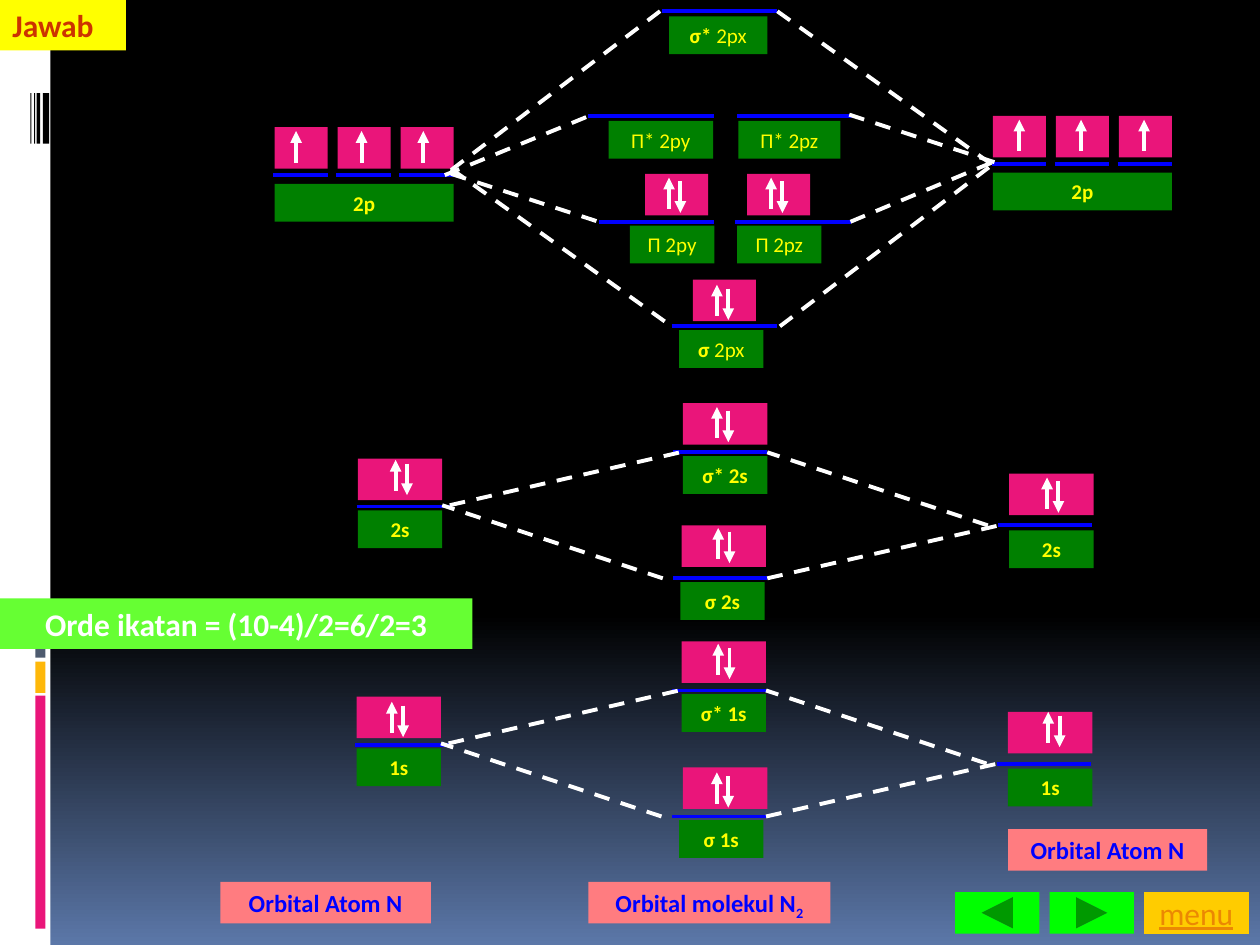
from dataclasses import dataclass

from lxml import etree
from pptx import Presentation
from pptx.dml.color import RGBColor
from pptx.enum.dml import MSO_LINE
from pptx.enum.shapes import MSO_CONNECTOR, MSO_SHAPE
from pptx.enum.text import MSO_ANCHOR, PP_ALIGN
from pptx.oxml.ns import qn
from pptx.util import Inches, Pt

RECTANGLE = MSO_SHAPE.RECTANGLE
BACK = MSO_SHAPE.ACTION_BUTTON_BACK_OR_PREVIOUS
FORWARD = MSO_SHAPE.ACTION_BUTTON_FORWARD_OR_NEXT
BLANK_BUTTON = MSO_SHAPE.ACTION_BUTTON_CUSTOM
STRAIGHT = MSO_CONNECTOR.STRAIGHT
DASH = MSO_LINE.DASH
LEFT, CENTER = PP_ALIGN.LEFT, PP_ALIGN.CENTER
TOP, MIDDLE = MSO_ANCHOR.TOP, MSO_ANCHOR.MIDDLE


@dataclass(frozen=True)
class Theme:
    font: str = "Calibri"
    black: str = "000000"
    white: str = "FFFFFF"
    horizon: str = "5B77A8"
    pink: str = "EA157A"
    amber: str = "FEB80A"
    slate: str = "4E5B6F"
    level: str = "0000FF"
    label: str = "008000"
    yellow: str = "FFFF00"
    caption: str = "FF7C80"
    result: str = "66FF33"
    title: str = "CC3300"
    button: str = "00FF00"
    menu: str = "FFCC00"
    menu_text: str = "EB8803"
    label_size: int = 12
    caption_size: int = 14
    heading_size: int = 18
    line_width: float = 2.25


THEME = Theme()

# Left, top, width, height, colour
SIDEBAR = [
    (0, 0, 0.4, 7.5, THEME.white),
    (0.28, 5.52, 0.08, 1.85, THEME.pink),
    (0.28, 5.25, 0.08, 0.25, THEME.amber),
    (0.28, 5.07, 0.08, 0.15, THEME.slate),
    (0.34, 0.74, 0.05, 0.4, THEME.black),
    (0.29, 0.74, 0.03, 0.4, THEME.black),
    (0.27, 0.74, 0.01, 0.4, THEME.black),
    (0.24, 0.74, 0.01, 0.4, THEME.black),
]

# The s shells share one layout: name, shift right, shift down
S_SHELLS = [("1s", 0, 0), ("2s", 0.01, -1.89)]
# Label prefix, level left and top, label left and top
S_ORBITALS = [
    ("", 2.82, 5.91, 2.83, 5.94),
    ("", 7.91, 6.06, 8, 6.1),
    ("σ* ", 5.33, 5.48, 5.41, 5.51),
    ("σ ", 5.33, 6.48, 5.39, 6.51),
]
S_LINKS = [
    (3.56, 5.9, 5.39, 5.48),
    (6.08, 6.48, 7.92, 6.06),
    (5.25, 6.48, 3.5, 5.9),
    (7.83, 6.06, 6.08, 5.48),
]

# Bold text, plain text, level left, top, width, label left, top, width
P_MOLECULAR = [
    ("σ* ", "2px", 5.25, 0.09, 0.92, 5.31, 0.13, 0.78),
    ("", "Π* 2py", 4.67, 0.92, 1, 4.83, 0.96, 0.83),
    ("", "Π* 2pz", 5.85, 0.92, 0.91, 5.86, 0.96, 0.81),
    ("", "Π 2py", 4.75, 1.76, 0.92, 5, 1.79, 0.67),
    ("", "Π 2pz", 5.83, 1.76, 0.92, 5.85, 1.79, 0.67),
    ("σ", " 2px", 5.33, 2.59, 0.84, 5.39, 2.62, 0.67),
]
# Left and top of the set, then the x of each electron
P_ATOMIC = [
    (2.18, 1.01, (2.35, 2.87, 3.36)),
    (7.88, 0.92, (8.09, 8.58, 9.08)),
]
P_LINKS = [
    (3.58, 1.35, 5.25, 0.08),
    (6.19, 2.59, 7.86, 1.32),
    (3.53, 1.39, 4.7, 0.91),
    (6.75, 1.76, 7.92, 1.27),
    (3.58, 1.38, 4.75, 1.76),
    (6.74, 0.91, 7.9, 1.29),
    (3.58, 1.34, 5.33, 2.59),
    (6.17, 0.09, 7.92, 1.34),
]

# Box left, top, width, then x and y of the upward arrow tip
ELECTRON_PAIRS = [
    (2.83, 5.53, 0.67, 3.11, 5.57),
    (8, 5.65, 0.67, 8.32, 5.65),
    (5.41, 5.09, 0.67, 5.7, 5.11),
    (5.42, 6.09, 0.67, 5.69, 6.13),
    (2.84, 3.64, 0.67, 3.14, 3.65),
    (8.01, 3.76, 0.67, 8.31, 3.79),
    (5.42, 3.2, 0.67, 5.69, 3.23),
    (5.41, 4.17, 0.67, 5.7, 4.19),
    (5.5, 2.22, 0.5, 5.69, 2.26),
    (5.12, 1.38, 0.5, 5.31, 1.41),
    (5.93, 1.38, 0.5, 6.12, 1.41),
]


def color(value):
    return RGBColor.from_string(value)


def add_block(slide, left, top, width, height, fill, kind=RECTANGLE):
    shape = slide.shapes.add_shape(
        kind, Inches(left), Inches(top), Inches(width), Inches(height))
    shape.shadow.inherit = False
    shape.fill.solid()
    shape.fill.fore_color.rgb = color(fill)
    shape.line.fill.background()
    return shape


def add_text(shape, runs, size, text_color, align=CENTER, anchor=TOP, wrap=True):
    """Write (text, bold) runs and return them."""
    frame = shape.text_frame
    frame.word_wrap = wrap
    frame.vertical_anchor = anchor
    paragraph = frame.paragraphs[0]
    paragraph.alignment = align
    for text, bold in runs:
        run = paragraph.add_run()
        run.text = text
        run.font.name = THEME.font
        run.font.size = Pt(size)
        run.font.bold = bold
        run.font.color.rgb = color(text_color)
    return paragraph.runs


def add_line(slide, x1, y1, x2, y2, line_color=THEME.white, dash=None, arrow=None):
    connector = slide.shapes.add_connector(
        STRAIGHT, Inches(x1), Inches(y1), Inches(x2), Inches(y2))
    connector.line.color.rgb = color(line_color)
    connector.line.width = Pt(THEME.line_width)
    if dash:
        connector.line.dash_style = dash
    properties = connector._element.spPr
    if arrow:
        etree.SubElement(properties.find(qn("a:ln")), qn(arrow), type="triangle")
    etree.SubElement(properties, qn("a:effectLst"))


def add_level(slide, left, top, width):
    add_line(slide, left, top, left + width, top, THEME.level)


def add_label(slide, left, top, width, runs):
    shape = add_block(slide, left, top, width, 0.3, THEME.label)
    add_text(shape, runs, THEME.label_size, THEME.yellow)


def add_electron(slide, x, y, arrow="a:headEnd"):
    add_line(slide, x, y, x, y + 0.25, arrow=arrow)


def add_caption(slide, left, top, width, runs):
    shape = add_block(slide, left, top, width, 0.33, THEME.caption)
    return add_text(shape, runs, THEME.caption_size, THEME.level)


def add_background(slide):
    fill = slide.background.fill
    fill.gradient()
    fill.gradient_angle = 270
    stops = [(0.65, THEME.black), (1, THEME.horizon)]
    for stop, (position, value) in zip(fill.gradient_stops, stops):
        stop.position = position
        stop.color.rgb = color(value)
    for bar in SIDEBAR:
        add_block(slide, *bar)


def add_s_shells(slide):
    for name, right, down in S_SHELLS:
        for prefix, level_x, level_y, label_x, label_y in S_ORBITALS:
            add_level(slide, level_x + right, level_y + down, 0.75)
            add_label(slide, label_x + right, label_y + down, 0.67,
                      [(prefix + name, True)])
        for x1, y1, x2, y2 in S_LINKS:
            add_line(slide, x1 + right, y1 + down, x2 + right, y2 + down, dash=DASH)


def add_p_shell(slide):
    for bold, plain, level_x, level_y, level_width, *label in P_MOLECULAR:
        add_level(slide, level_x, level_y, level_width)
        runs = [(text, strong) for text, strong in ((bold, True), (plain, False)) if text]
        add_label(slide, *label, runs)
    for left, top, electrons in P_ATOMIC:
        add_label(slide, left, top + 0.45, 1.42, [("2p", True)])
        for index, x in enumerate(electrons):
            box_left = left + 0.5 * index
            add_level(slide, box_left - 0.01, top + 0.38, 0.43)
            add_block(slide, box_left, top, 0.42, 0.33, THEME.pink)
            add_electron(slide, x, top + 0.03)
    for link in P_LINKS:
        add_line(slide, *link, dash=DASH)


def add_electron_pairs(slide):
    for left, top, width, x, y in ELECTRON_PAIRS:
        add_block(slide, left, top, width, 0.33, THEME.pink)
        add_electron(slide, x + 0.09, y + 0.03, "a:tailEnd")
        add_electron(slide, x, y)


def add_captions(slide):
    add_caption(slide, 1.75, 7, 1.67, [("Orbital Atom N", True)])
    add_caption(slide, 8, 6.58, 1.58, [("Orbital Atom N", True)])
    runs = add_caption(slide, 4.67, 7, 1.92, [("Orbital molekul N", True), ("2", True)])
    runs[1]._r.get_or_add_rPr().set("baseline", "-25000")
    result = add_block(slide, 0, 4.75, 3.75, 0.4, THEME.result)
    add_text(result, [("Orde ikatan = (10-4)/2=6/2=3", True)],
             THEME.heading_size, THEME.white)
    title = add_block(slide, 0, 0, 1, 0.4, THEME.yellow)
    add_text(title, [("Jawab", True)], THEME.heading_size, THEME.title, LEFT)


def add_navigation(slide):
    add_block(slide, 8.33, 7.08, 0.67, 0.33, THEME.button, FORWARD)
    add_block(slide, 7.58, 7.08, 0.67, 0.33, THEME.button, BACK)
    menu = add_block(slide, 9.08, 7.08, 0.83, 0.33, THEME.menu, BLANK_BUTTON)
    runs = add_text(menu, [("menu", False)], THEME.heading_size, THEME.menu_text,
                    anchor=MIDDLE, wrap=False)
    runs[0].font.underline = True


def main():
    presentation = Presentation()
    presentation.slide_width = Inches(10)
    presentation.slide_height = Inches(7.5)
    slide = presentation.slides.add_slide(presentation.slide_layouts[6])
    add_background(slide)
    # Orbital diagram
    add_s_shells(slide)
    add_p_shell(slide)
    add_electron_pairs(slide)
    # Captions and buttons
    add_captions(slide)
    add_navigation(slide)
    presentation.save("out.pptx")


if __name__ == "__main__":
    main()
